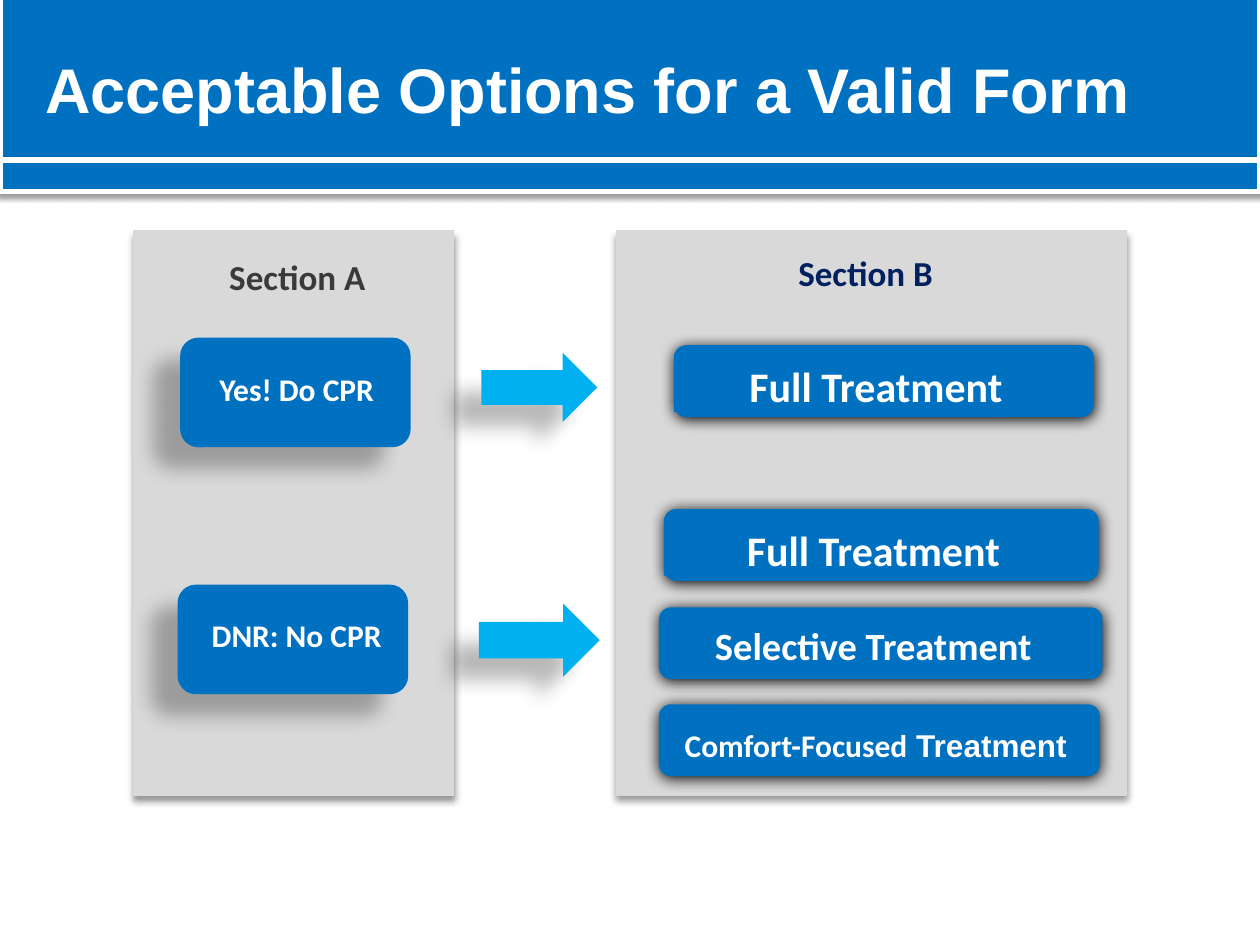
from lxml.etree import SubElement
from pptx import Presentation
from pptx.dml.color import RGBColor
from pptx.enum.shapes import MSO_SHAPE
from pptx.enum.text import MSO_ANCHOR, PP_ALIGN
from pptx.oxml.ns import qn
from pptx.util import Emu, Pt

PX = 9144  # 100 px to the inch
COLORS = {
    "blue": "0070C0",
    "arrow": "00B0F0",
    "panel": "D9D9D9",
    "white": "FFFFFF",
    "charcoal": "3A3A3A",
    "navy": "002060",
    "black": "000000",
}
# Shadows: opacity %, blur pt, distance pt, direction in degrees
BAND_SHADOW = (38, 3.1, 1.6, 90)
PANEL_SHADOW = (40, 4, 3, 90)
CAST_SHADOW = (28, 11.8, 19.7, 141)
GLOW_SHADOW = (100, 8.5, 1, 90)


def px(*lengths):
    return [Emu(length * PX) for length in lengths]


def color(name):
    return RGBColor.from_string(COLORS[name])


def add_shadow(shape, opacity, blur, distance, direction):
    effects = shape._element.spPr.find(qn("a:effectLst"))
    shadow = SubElement(
        effects, qn("a:outerShdw"), blurRad=str(Pt(blur)), dist=str(Pt(distance)),
        dir=str(direction * 60000), algn="ctr", rotWithShape="0")
    tint = SubElement(shadow, qn("a:srgbClr"), val=COLORS["black"])
    SubElement(tint, qn("a:alpha"), val=str(opacity * 1000))


def add_block(slide, kind, box, fill, shadow=None, line=None, line_width=0.75):
    block = slide.shapes.add_shape(kind, *px(*box))
    block.shadow.inherit = False
    block.fill.solid()
    block.fill.fore_color.rgb = color(fill)
    if line:
        block.line.color.rgb = color(line)
        block.line.width = Pt(line_width)
    else:
        block.line.fill.background()
    if shadow:
        add_shadow(block, *shadow)
    return block


def write(shape, runs, size, ink, align=PP_ALIGN.CENTER, anchor=MSO_ANCHOR.TOP):
    frame = shape.text_frame
    frame.word_wrap = True
    frame.vertical_anchor = anchor
    paragraph = frame.paragraphs[0]
    paragraph.alignment = align
    for text, font_name in runs:
        run = paragraph.add_run()
        run.text = text
        run.font.name = font_name
        run.font.size = Pt(size)
        run.font.bold = True
        run.font.color.rgb = color(ink)


def add_heading(slide, box, text, ink):
    heading = slide.shapes.add_textbox(*px(*box))
    write(heading, [(text, "Calibri")], 20, ink)


def add_option(slide, box, label_box, runs, size, shadow):
    add_block(slide, MSO_SHAPE.ROUNDED_RECTANGLE, box, "blue", shadow)
    label = add_block(slide, MSO_SHAPE.RECTANGLE, label_box, "blue")
    write(label, runs, size, "white")


def add_arrow(slide, box):
    arrow = add_block(slide, MSO_SHAPE.LEFT_ARROW, box, "arrow", CAST_SHADOW)
    arrow.rotation = 180


def add_title(slide, box, text):
    title = slide.shapes.title
    title.left, title.top, title.width, title.height = px(*box)
    write(title, [(text, "Arial")], 36, "white", PP_ALIGN.LEFT, MSO_ANCHOR.MIDDLE)
    slide.shapes._spTree.append(title._element)  # bring in front of the bands


def main():
    deck = Presentation()
    deck.slide_width, deck.slide_height = px(1000, 750)
    slide = deck.slides.add_slide(deck.slide_layouts[5])

    # Header
    for band in [(0, -5, 1000, 132), (0, 127, 1000, 25)]:
        add_block(slide, MSO_SHAPE.RECTANGLE, band, "blue", BAND_SHADOW, "white", 3)
    add_title(slide, (26, 8, 900, 125), "Acceptable Options for a Valid Form")

    # Section panels
    for left, width in [(489, 405), (106, 254)]:
        add_block(slide, MSO_SHAPE.RECTANGLE, (left, 183, width, 448), "panel",
                  PANEL_SHADOW, "panel")
    add_heading(slide, (129, 198, 214, 40), "Section A", "charcoal")
    add_heading(slide, (580, 195, 214, 40), "Section B", "navy")

    # Section A: resuscitation choices
    for box, label_box, text in [
        ((143, 268, 183, 87), (152, 289, 167, 37), "Yes! Do CPR"),
        ((141, 464, 183, 87), (148, 484, 175, 37), "DNR: No CPR"),
    ]:
        add_option(slide, box, label_box, [(text, "Calibri")], 18, CAST_SHADOW)

    # Section B: treatments allowed with each choice
    full = [("Full Treatment ", "Calibri")]
    selective = [("Selective Treatment", "Calibri")]
    comfort = [("Comfort-Focused", "Calibri"), (" Treatment ", "Arial")]
    for box, label_box, runs, size in [
        ((535, 274, 333, 57), (535, 281, 328, 46), full, 24),
        ((527, 404, 345, 57), (527, 411, 340, 46), full, 24),
        ((523, 482, 352, 57), (529, 489, 328, 43), selective, 22),
        ((523, 559, 350, 57), (528, 571, 341, 37), comfort, 18),
    ]:
        add_option(slide, box, label_box, runs, size, GLOW_SHADOW)

    # Arrows from choice to treatments
    for box in [(382, 280, 92, 55), (380, 479, 96, 58)]:
        add_arrow(slide, box)

    deck.save("out.pptx")


if __name__ == "__main__":
    main()
